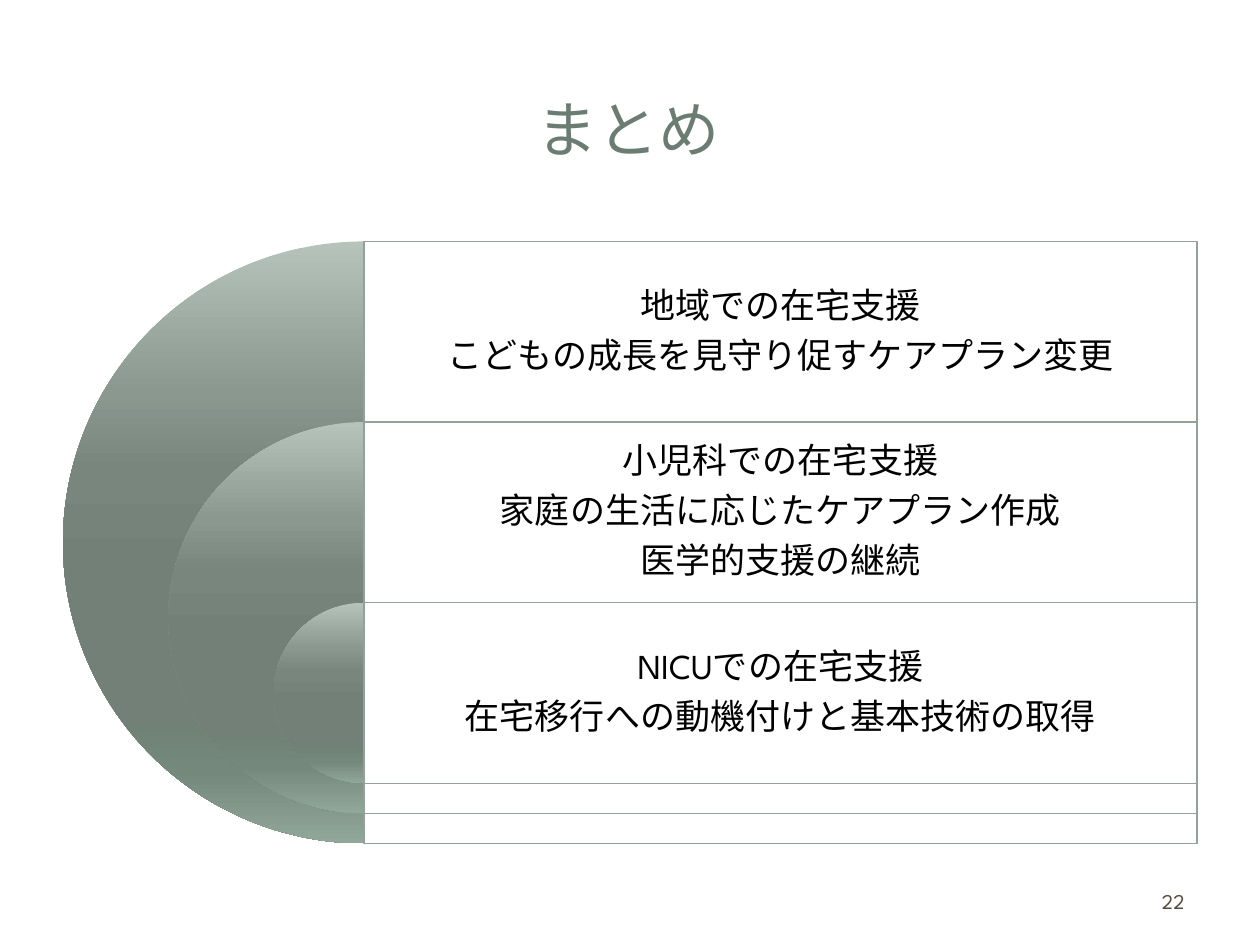
"""Build the summary slide with nested half circles and three levels of home-care support."""
import pptx
import pptx.util
import pptx.oxml
import pptx.oxml.ns
from lxml import etree
from pptx.dml.color import RGBColor
from pptx.enum.shapes import MSO_SHAPE
from pptx.enum.text import MSO_ANCHOR, PP_ALIGN

Pt = pptx.util.Pt
qn = pptx.oxml.ns.qn

THEME = {
    "title": ("Vollkorn", 35, "6B7D72"),
    "body": ("League Spartan", 20, "000000"),
    "number": ("League Spartan", 12, "564B3C"),
    "panel": "FFFFFF",
    "panel_alpha": 90,
    "line": "93A299",
    "gradient": [(0, "B6C3BB"), (25, "8B9890"), (38, "79867E"), (55, "728078"),
                 (80, "708176"), (88, "75887C"), (100, "91A79A")],
}

LEVELS = [
    ["地域での在宅支援", "こどもの成長を見守り促すケアプラン変更"],
    ["小児科での在宅支援", "家庭の生活に応じたケアプラン作成", "医学的支援の継続"],
    ["NICUでの在宅支援", "在宅移行への動機付けと基本技術の取得"],
]


def write(tf, lines, style, align):
    font, size, color = THEME[style]
    tf.text = "\n".join(lines)
    tf.word_wrap = True
    tf.vertical_anchor = MSO_ANCHOR.MIDDLE
    for p in tf.paragraphs:
        p.alignment = align
        for r in p.runs:
            r.font.name = font
            r.font.size = Pt(size)
            r.font.color.rgb = RGBColor.from_string(color)


def fill_gradient(sp, stops):
    sp.fill.gradient()
    sp.fill.gradient_angle = 270
    gs_list = sp._element.spPr.find(".//" + qn("a:gsLst"))
    for gs in list(gs_list):
        gs_list.remove(gs)
    for pos, color in stops:
        gs = etree.SubElement(gs_list, qn("a:gs"), pos=str(pos * 1000))
        etree.SubElement(gs, qn("a:srgbClr"), val=color)


prs = pptx.Presentation()
prs.slide_width, prs.slide_height = Pt(720), Pt(540)
s = prs.slides.add_slide(prs.slide_layouts[5])

title = s.shapes.title
title.left, title.top, title.width, title.height = Pt(34), Pt(32.4), Pt(650), Pt(82)
write(title.text_frame, ["まとめ"], "title", PP_ALIGN.CENTER)

center_x, top, right, diameter = 208, 138, 684, 344
row_h = 0.3 * diameter
shrink = 0.35 * diameter
width = right - center_x
group = s.shapes.add_group_shape()

for i, lines in enumerate(LEVELS):
    y = top + i * row_h
    d = diameter - i * shrink

    pie = group.shapes.add_shape(MSO_SHAPE.PIE, Pt(center_x - d / 2), Pt(y), Pt(d), Pt(d))
    pie.adjustments[0], pie.adjustments[1] = 54, 162
    pie.shadow.inherit = False
    fill_gradient(pie, THEME["gradient"])
    pie.line.fill.background()

    panel = group.shapes.add_shape(MSO_SHAPE.RECTANGLE, Pt(center_x), Pt(y), Pt(width), Pt(d))
    panel.shadow.inherit = False
    panel.fill.solid()
    panel.fill.fore_color.rgb = RGBColor.from_string(THEME["panel"])
    color = panel._element.spPr.find(qn("a:solidFill")).find(qn("a:srgbClr"))
    etree.SubElement(color, qn("a:alpha"), val=str(THEME["panel_alpha"] * 1000))
    panel.line.color.rgb = RGBColor.from_string(THEME["line"])
    panel.line.width = Pt(0.75)

    tf = group.shapes.add_textbox(Pt(center_x), Pt(y), Pt(width), Pt(row_h)).text_frame
    tf.margin_left = tf.margin_right = tf.margin_top = tf.margin_bottom = Pt(6)
    write(tf, lines, "body", PP_ALIGN.CENTER)
    for p in tf.paragraphs:
        p.line_spacing = 0.9
        after = etree.SubElement(p._p.get_or_add_pPr(), qn("a:spcAft"))
        etree.SubElement(after, qn("a:spcPct"), val="35000")

number = s.shapes.add_textbox(Pt(516), Pt(500.4), Pt(168), Pt(28.8))
write(number.text_frame, ["22"], "number", PP_ALIGN.RIGHT)

prs.save("out.pptx")
